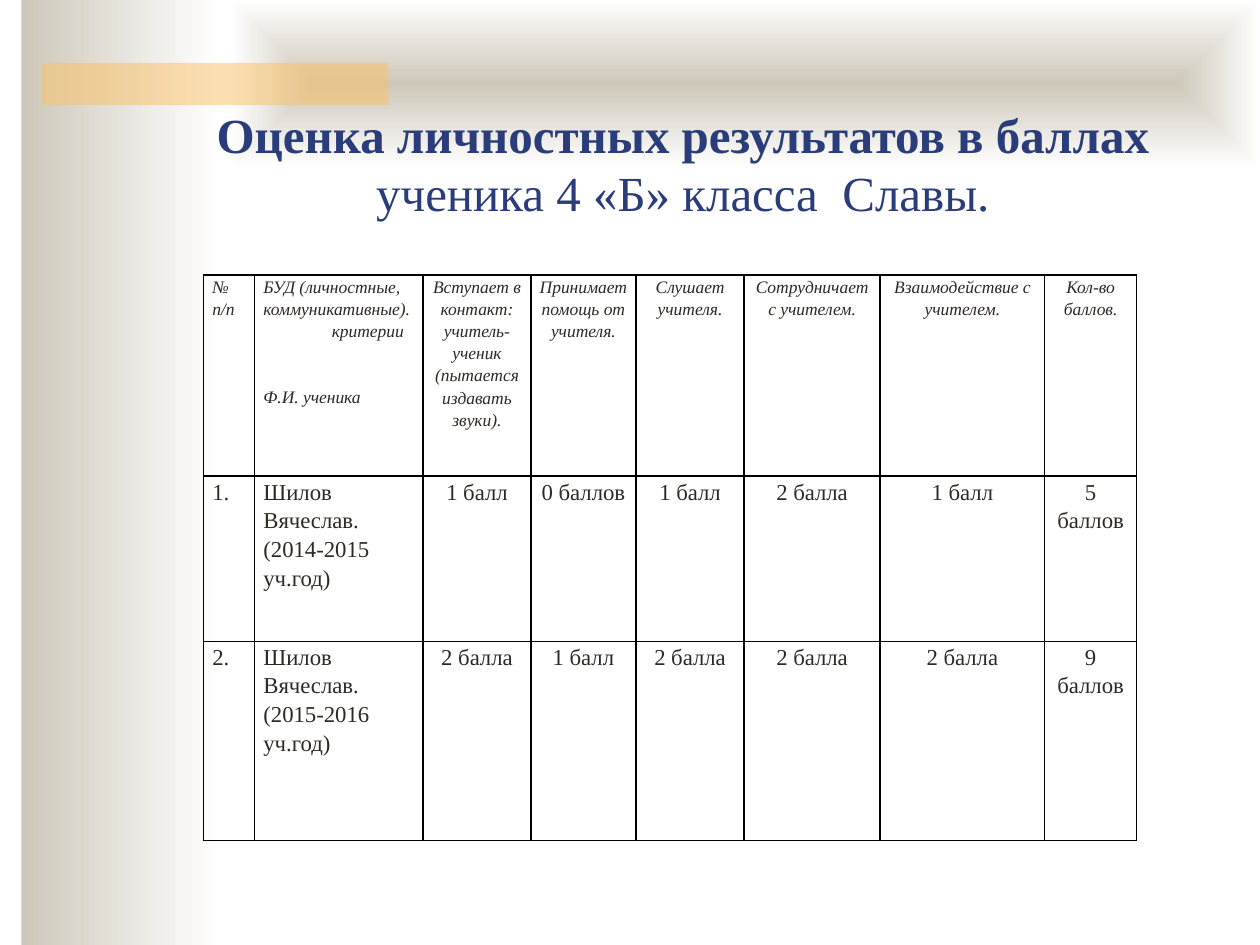
from lxml import etree
from pptx import Presentation
from pptx import util as u
from pptx.dml import color
from pptx.enum import shapes, text
from pptx.oxml import ns

COLORS = {"sand": "CEC8BA", "white": "FFFFFF", "amber": "FAC164",
          "title": "2A3D7A", "body": "2E2924", "border": "000000"}
FONT = "Times New Roman"
CENTER = text.PP_ALIGN.CENTER


def rgb(name):
    return color.RGBColor.from_string(COLORS[name])


def add_panel(left, top, width, height):
    shape = slide.shapes.add_shape(shapes.MSO_SHAPE.RECTANGLE, u.Cm(left), u.Cm(top),
                                   u.Cm(width), u.Cm(height))
    shape.shadow.inherit = False
    shape.line.fill.background()
    return shape


presentation = Presentation()
presentation.slide_width = u.Cm(25.4)
presentation.slide_height = u.Cm(19.05)
slide = presentation.slides.add_slide(presentation.slide_layouts[5])

side_panel = add_panel(0.43, 0, 4.01, 19.05)
top_panel = add_panel(4.65, 0, 20.75, 3.38)
for panel in (side_panel, top_panel):
    panel.fill.gradient()
    panel.fill.gradient_angle = 0
    for stop, name in zip(panel.fill.gradient_stops, ("sand", "white")):
        stop.color.rgb = rgb(name)

linear = top_panel.element.spPr.find(".//" + ns.qn("a:lin"))
shape_path = etree.Element(ns.qn("a:path"), path="shape")
etree.SubElement(shape_path, ns.qn("a:fillToRect"), l="50000", t="50000", r="50000", b="50000")
linear.getparent().replace(linear, shape_path)

accent_bar = add_panel(0.84, 1.27, 6.99, 0.85)
accent_bar.fill.solid()
accent_bar.fill.fore_color.rgb = rgb("amber")
accent_color = accent_bar.element.spPr.find(".//" + ns.qn("a:srgbClr"))
etree.SubElement(accent_color, ns.qn("a:alpha"), val="50000")

title = slide.shapes.title
title.element.getparent().append(title.element)
title.left, title.top, title.width, title.height = u.Cm(2.97), u.Cm(1.93), u.Cm(21.59), u.Cm(3.81)
title_frame = title.text_frame
title_frame.text = "Оценка личностных результатов в баллах\vученика 4 «Б» класса  Славы."
title_frame.auto_size = text.MSO_AUTO_SIZE.NONE
title_frame.word_wrap = True
title_frame.vertical_anchor = text.MSO_ANCHOR.BOTTOM
title_frame.margin_bottom = u.Cm(1.27)
title_frame.paragraphs[0].alignment = CENTER
for run, bold in zip(title_frame.paragraphs[0].runs, (True, False)):
    run.font.name = FONT
    run.font.size = u.Pt(28)
    run.font.bold = bold
    run.font.color.rgb = rgb("title")

rows = [
    ["№ п/п", "БУД (личностные, коммуникативные).\nкритерии\nФ.И. ученика",
     "Вступает в контакт: учитель-ученик (пытается издавать звуки).",
     "Принимает помощь от учителя.", "Слушает учителя.", "Сотрудничает с учителем.",
     "Взаимодействие с учителем.", "Кол-во баллов."],
    ["1.", "Шилов Вячеслав.\n(2014-2015 уч.год)", "1 балл", "0 баллов", "1 балл",
     "2 балла", "1 балл", "5 баллов"],
    ["2.", "Шилов Вячеслав.\n(2015-2016 уч.год)", "2 балла", "1 балл", "2 балла",
     "2 балла", "2 балла", "9 баллов"],
]
column_widths = [1.03, 3.4, 2.17, 2.12, 2.18, 2.74, 3.32, 1.85]
row_heights = [4.06, 3.33, 4.01]

table = slide.shapes.add_table(len(rows), len(column_widths), u.Cm(4.1), u.Cm(5.54),
                               u.Cm(sum(column_widths)), u.Cm(sum(row_heights))).table
table.first_row = False
table.horz_banding = False
for column, width in zip(table.columns, column_widths):
    column.width = u.Cm(width)
for row, height in zip(table.rows, row_heights):
    row.height = u.Cm(height)

for row_index, row_texts in enumerate(rows):
    for column_index, cell_text in enumerate(row_texts):
        cell = table.cell(row_index, column_index)
        cell.text_frame.text = cell_text
        cell.margin_left = cell.margin_right = u.Cm(0.18)
        cell.margin_top = cell.margin_bottom = 0
        for paragraph in cell.text_frame.paragraphs:
            paragraph.line_spacing = 1.15
            paragraph.alignment = CENTER if column_index > 1 else text.PP_ALIGN.LEFT
            for run in paragraph.runs:
                run.font.name = FONT
                run.font.size = u.Pt(10 if row_index == 0 else 13)
                run.font.italic = row_index == 0
                run.font.color.rgb = rgb("body")
        cell_properties = cell._tc.get_or_add_tcPr()
        for side in ("lnL", "lnR", "lnT", "lnB"):
            border = etree.SubElement(cell_properties, ns.qn("a:" + side), w=str(u.Pt(1)))
            border_fill = etree.SubElement(border, ns.qn("a:solidFill"))
            etree.SubElement(border_fill, ns.qn("a:srgbClr"), val=COLORS["border"])
        cell.fill.background()

criteria, student = table.cell(0, 1).text_frame.paragraphs[1:]
criteria.alignment = CENTER
criteria._p.get_or_add_pPr().set("marL", str(u.Cm(1.17)))
student.space_before = u.Pt(25)

presentation.save("out.pptx")
